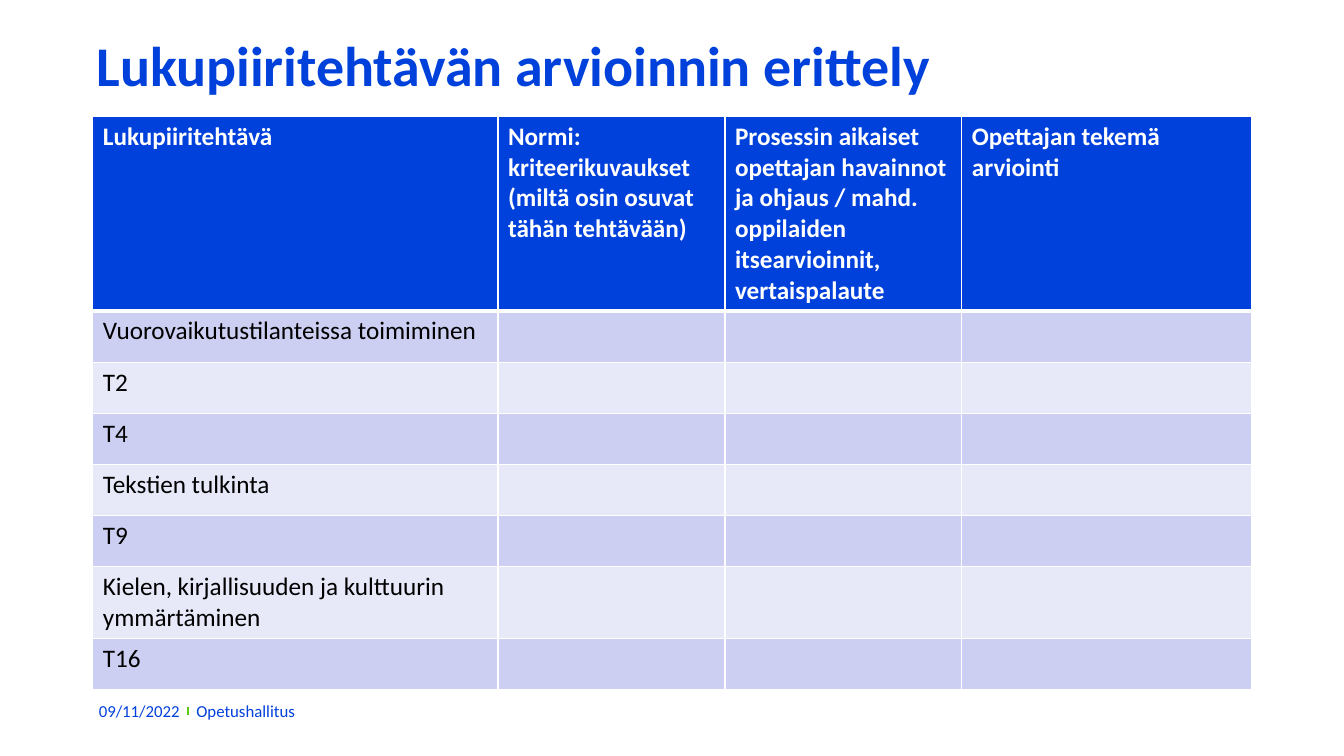
import dataclasses

import pptx
import pptx.dml.color
import pptx.enum.shapes
import pptx.enum.text
import pptx.oxml.ns
import pptx.util
from lxml import etree

Cm = pptx.util.Cm
Pt = pptx.util.Pt
MIDDLE = pptx.enum.text.MSO_ANCHOR.MIDDLE


@dataclasses.dataclass(frozen=True)
class Theme:
    """Colours, font and type sizes of the slide."""
    font: str = "Calibri"
    blue: str = "0041DC"
    green: str = "5BCA13"
    white: str = "FFFFFF"
    black: str = "000000"
    bands: tuple = ("CCCFF2", "E7E9F9")
    title: int = 40
    body: int = 18
    footer: int = 12


THEME = Theme()
COLUMN_WIDTHS = (10.21, 5.72, 5.97, 7.31)
HEADER_HEIGHT, ROW_HEIGHT, TALL_ROW_HEIGHT = 4.88, 1.29, 1.78
HEADERS = (
    "Lukupiiritehtävä",
    "Normi: kriteerikuvaukset (miltä osin osuvat tähän tehtävään)",
    "Prosessin aikaiset opettajan havainnot ja ohjaus / mahd. "
    "oppilaiden itsearvioinnit, vertaispalaute",
    "Opettajan tekemä arviointi",
)
GOALS = (
    ("Vuorovaikutustilanteissa toimiminen", ROW_HEIGHT),
    ("T2", ROW_HEIGHT),
    ("T4", ROW_HEIGHT),
    ("Tekstien tulkinta", ROW_HEIGHT),
    ("T9", ROW_HEIGHT),
    ("Kielen, kirjallisuuden ja kulttuurin ymmärtäminen", TALL_ROW_HEIGHT),
    ("T16", ROW_HEIGHT),
)


def rgb(color):
    """Turn a hex string into a colour."""
    return pptx.dml.color.RGBColor.from_string(color)


def write(tf, text, size, color, bold=False):
    """Set one paragraph of text and format it."""
    tf.text = text
    p = tf.paragraphs[0]
    for font in [p.font] + [r.font for r in p.runs]:
        font.name = THEME.font
        font.size = Pt(size)
        font.bold = bold
        font.color.rgb = rgb(color)


def add_title(s, left, top, width, height):
    """Place the title placeholder in its box."""
    sp = s.shapes.title
    sp.left, sp.top, sp.width, sp.height = map(Cm, (left, top, width, height))
    tf = sp.text_frame
    write(tf, "Lukupiiritehtävän arvioinnin erittely", THEME.title, THEME.blue, True)
    tf.auto_size = pptx.enum.text.MSO_AUTO_SIZE.NONE
    tf.vertical_anchor = MIDDLE
    p = tf.paragraphs[0]
    p.alignment = pptx.enum.text.PP_ALIGN.LEFT
    p.line_spacing = 0.9


def set_borders(cell, top, bottom):
    """Draw white cell borders with the given top and bottom widths."""
    qn = pptx.oxml.ns.qn
    tc_pr = cell._tc.get_or_add_tcPr()
    for side, width in (("L", 1), ("R", 1), ("T", top), ("B", bottom)):
        ln = etree.SubElement(tc_pr, qn(f"a:ln{side}"), w=str(Pt(width)))
        fill = etree.SubElement(ln, qn("a:solidFill"))
        etree.SubElement(fill, qn("a:srgbClr"), val=THEME.white)


def format_cell(cell, text, row):
    """Fill, border and write one cell according to its row."""
    is_header = row == 0
    set_borders(cell, 3 if row == 1 else 1, 3 if is_header else 1)
    cell.fill.solid()
    cell.fill.fore_color.rgb = rgb(THEME.blue if is_header else THEME.bands[(row - 1) % 2])
    color = THEME.white if is_header else THEME.black
    write(cell.text_frame, text, THEME.body, color, is_header)


def add_assessment_table(s, left, top):
    """Build the assessment table from its top left corner."""
    rows = [HEADERS] + [(goal, "", "", "") for goal, _ in GOALS]
    heights = [HEADER_HEIGHT] + [height for _, height in GOALS]
    box = map(Cm, (left, top, sum(COLUMN_WIDTHS), sum(heights)))
    table = s.shapes.add_table(len(rows), len(HEADERS), *box).table
    for column, width in zip(table.columns, COLUMN_WIDTHS):
        column.width = Cm(width)
    for i, (texts, height) in enumerate(zip(rows, heights)):
        table.rows[i].height = Cm(height)
        for j, text in enumerate(texts):
            format_cell(table.cell(i, j), text, i)


def add_footer(s, left, top, width, height):
    """Place the date, the divider and the organisation in a row."""
    date_width = 2.46
    parts = (("09/11/2022", left, date_width),
             ("Opetushallitus", left + date_width, width - date_width))
    for text, x, w in parts:
        tf = s.shapes.add_textbox(*map(Cm, (x, top, w, height))).text_frame
        tf.margin_left = tf.margin_right = tf.margin_top = tf.margin_bottom = 0
        tf.word_wrap = True
        tf.vertical_anchor = MIDDLE
        write(tf, text, THEME.footer, THEME.blue)
    x, y = left + date_width - 0.22, top + 0.28
    line = s.shapes.add_connector(
        pptx.enum.shapes.MSO_CONNECTOR.STRAIGHT, *map(Cm, (x, y, x, y + 0.2)))
    line.line.color.rgb = rgb(THEME.green)
    line.line.width = Pt(1.25)
    etree.SubElement(line._element.spPr, pptx.oxml.ns.qn("a:effectLst"))


def main():
    """Build and save the slide."""
    prs = pptx.Presentation()
    prs.slide_width, prs.slide_height = Cm(33.87), Cm(19.05)
    s = prs.slides.add_slide(prs.slide_layouts[5])
    add_title(s, 2.18, 0.81, 29.21, 1.83)
    add_assessment_table(s, 2.34, 2.93)
    add_footer(s, 2.49, 17.53, 14.48, 0.74)
    prs.save("out.pptx")


if __name__ == "__main__":
    main()
